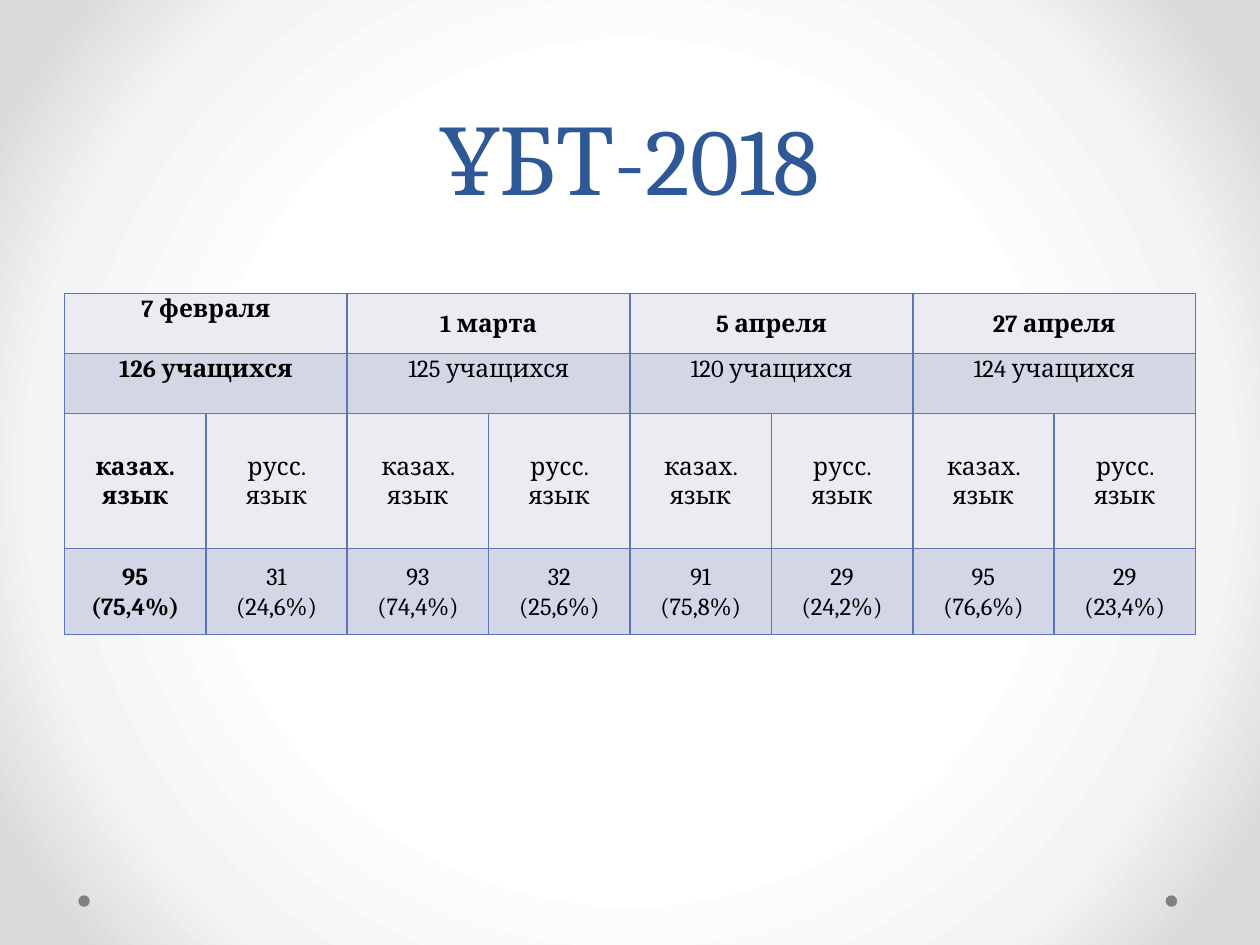
from lxml.etree import SubElement
from pptx import Presentation
from pptx.dml.color import RGBColor
from pptx.enum.shapes import MSO_SHAPE
from pptx.enum.text import MSO_ANCHOR, PP_ALIGN
from pptx.oxml import parse_xml
from pptx.oxml.ns import nsdecls, qn
from pptx.util import Cm, Pt

COLORS = {
    "title": "2F5897",
    "text": "000000",
    "border": "6076B4",
    "light": "EAECF2",
    "dark": "D2D6E5",
    "dot": "808080",
}
GRADIENT = [(50, "FFFFFF"), (76, "F4F4F4"), (92, "DADADA")]
FONT = "Cambria"

# Exam date, number of pupils, then (count, share) for Kazakh and Russian
EXAMS = [
    ("7 февраля", 126, ("95", "(75,4%)"), ("31", "(24,6%)")),
    ("1 марта", 125, ("93", "(74,4%)"), ("32", "(25,6%)")),
    ("5 апреля", 120, ("91", "(75,8%)"), ("29", "(24,2%)")),
    ("27 апреля", 124, ("95", "(76,6%)"), ("29", "(23,4%)")),
]
LANGUAGES = ("казах. язык", "русс. язык")
ROW_HEIGHTS = (1.21, 1.21, 2.72, 1.73)
COLUMN_WIDTH = 2.85


def write_text(frame, *lines, size=14, color="text", bold=False, spacing=1.06):
    """Write each line as a centred paragraph."""
    frame.word_wrap = True
    for number, line in enumerate(lines):
        para = frame.add_paragraph() if number else frame.paragraphs[0]
        para.alignment = PP_ALIGN.CENTER
        para.line_spacing = spacing
        span = para.add_run()
        span.text = line
        span.font.name = FONT
        span.font.size = Pt(size)
        span.font.bold = bold
        span.font.color.rgb = RGBColor.from_string(COLORS[color])


def set_background(page):
    """Fill the page with a gradient that spreads from its centre."""
    page.background.fill.gradient()
    fill = next(page.element.iter(qn("a:gradFill")))
    stops = "".join(
        f'<a:gs pos="{place * 1000}"><a:srgbClr val="{color}"/></a:gs>'
        for place, color in GRADIENT
    )
    fill.getparent().replace(fill, parse_xml(
        f'<a:gradFill {nsdecls("a")} rotWithShape="1"><a:gsLst>{stops}</a:gsLst>'
        '<a:path path="circle">'
        '<a:fillToRect l="50000" t="50000" r="50000" b="50000"/>'
        '</a:path></a:gradFill>'
    ))


def add_dot(page, left):
    dot = page.shapes.add_shape(
        MSO_SHAPE.OVAL, Cm(left), Cm(18.05), Cm(0.23), Cm(0.23))
    dot.shadow.inherit = False
    dot.fill.solid()
    dot.fill.fore_color.rgb = RGBColor.from_string(COLORS["dot"])
    dot.line.fill.background()


def add_title(page, text):
    box = page.shapes.add_textbox(Cm(1.27), Cm(0), Cm(22.86), Cm(4.45))
    box.text_frame.vertical_anchor = MSO_ANCHOR.BOTTOM
    write_text(box.text_frame, text, size=54, color="title", spacing=Pt(58))


def set_borders(cell):
    properties = cell._tc.get_or_add_tcPr()
    for position, side in enumerate(("lnL", "lnR", "lnT", "lnB")):
        line = SubElement(properties, qn(f"a:{side}"), w=str(Pt(1)))
        fill = SubElement(line, qn("a:solidFill"))
        SubElement(fill, qn("a:srgbClr"), val=COLORS["border"])
        properties.insert(position, line)


def fill_cell(cell, *lines, bold=False, anchor=MSO_ANCHOR.MIDDLE):
    cell.margin_left = cell.margin_right = Cm(0.18)
    cell.margin_top = cell.margin_bottom = Cm(0)
    cell.vertical_anchor = anchor
    write_text(cell.text_frame, *lines, bold=bold)


def add_results(page):
    columns = len(EXAMS) * len(LANGUAGES)
    table = page.shapes.add_table(
        len(ROW_HEIGHTS), columns, Cm(1.3), Cm(5.92),
        Cm(COLUMN_WIDTH * columns), Cm(sum(ROW_HEIGHTS))).table
    for column in table.columns:
        column.width = Cm(COLUMN_WIDTH)

    # Banded rows with thin borders
    for index, height in enumerate(ROW_HEIGHTS):
        table.rows[index].height = Cm(height)
        shade = COLORS["dark" if index % 2 else "light"]
        for cell in table.rows[index].cells:
            cell.fill.solid()
            cell.fill.fore_color.rgb = RGBColor.from_string(shade)
            set_borders(cell)

    # One pair of columns per exam, the first exam stressed
    for number, (date, pupils, *results) in enumerate(EXAMS):
        left = number * len(LANGUAGES)
        first = number == 0
        for row in (0, 1):
            table.cell(row, left).merge(table.cell(row, left + 1))
        fill_cell(table.cell(0, left), date, bold=True,
                  anchor=MSO_ANCHOR.TOP if first else MSO_ANCHOR.MIDDLE)
        fill_cell(table.cell(1, left), f"{pupils} учащихся", bold=first,
                  anchor=MSO_ANCHOR.TOP)
        for offset, (language, result) in enumerate(zip(LANGUAGES, results)):
            stressed = first and offset == 0
            fill_cell(table.cell(2, left + offset), language, bold=stressed)
            fill_cell(table.cell(3, left + offset), *result, bold=stressed)


def main():
    deck = Presentation()
    deck.slide_width, deck.slide_height = Cm(25.4), Cm(19.05)
    page = deck.slides.add_slide(deck.slide_layouts[6])
    set_background(page)
    for left in (23.5, 1.58):
        add_dot(page, left)
    add_title(page, "ҰБТ-2018")
    add_results(page)
    deck.save("out.pptx")


if __name__ == "__main__":
    main()
